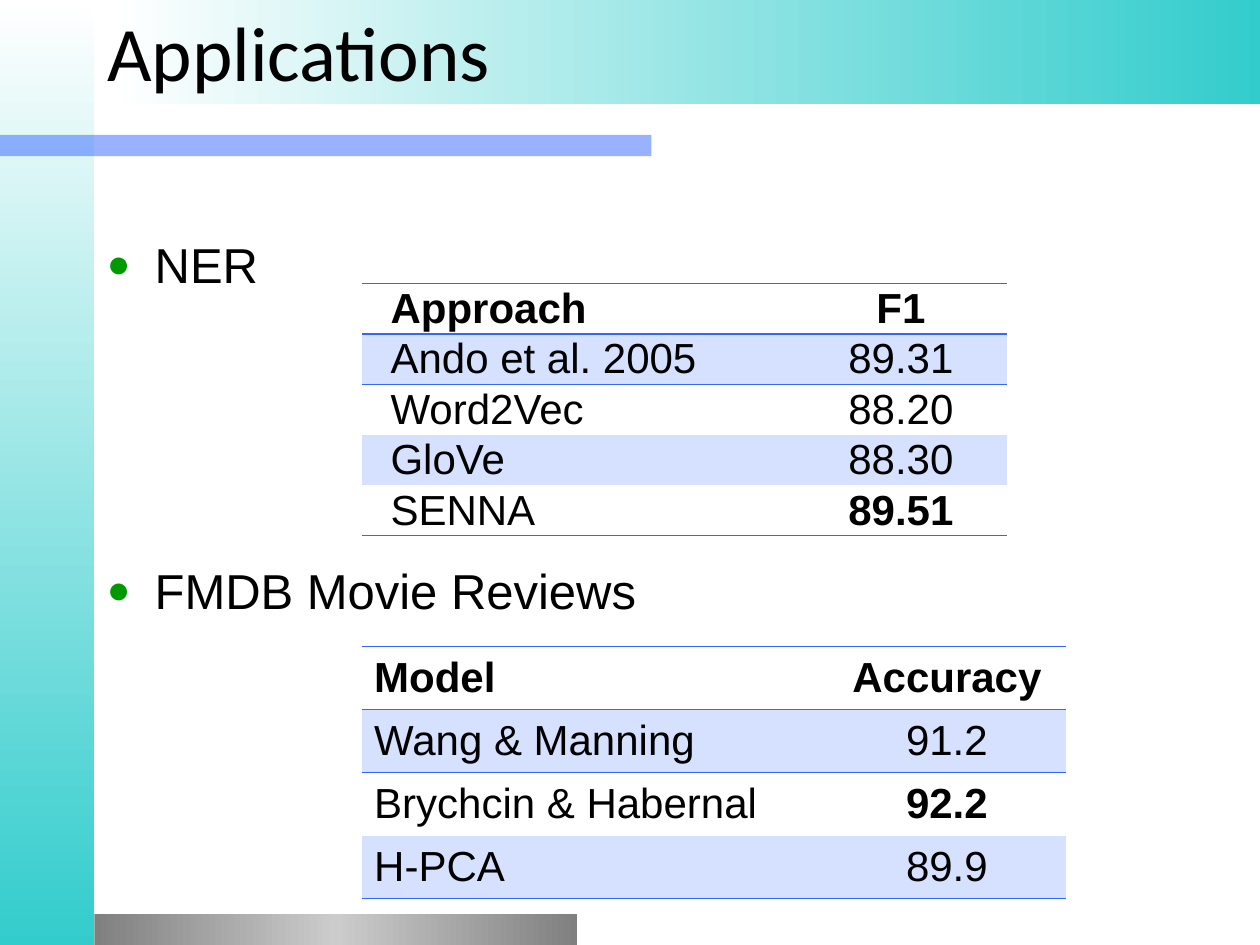
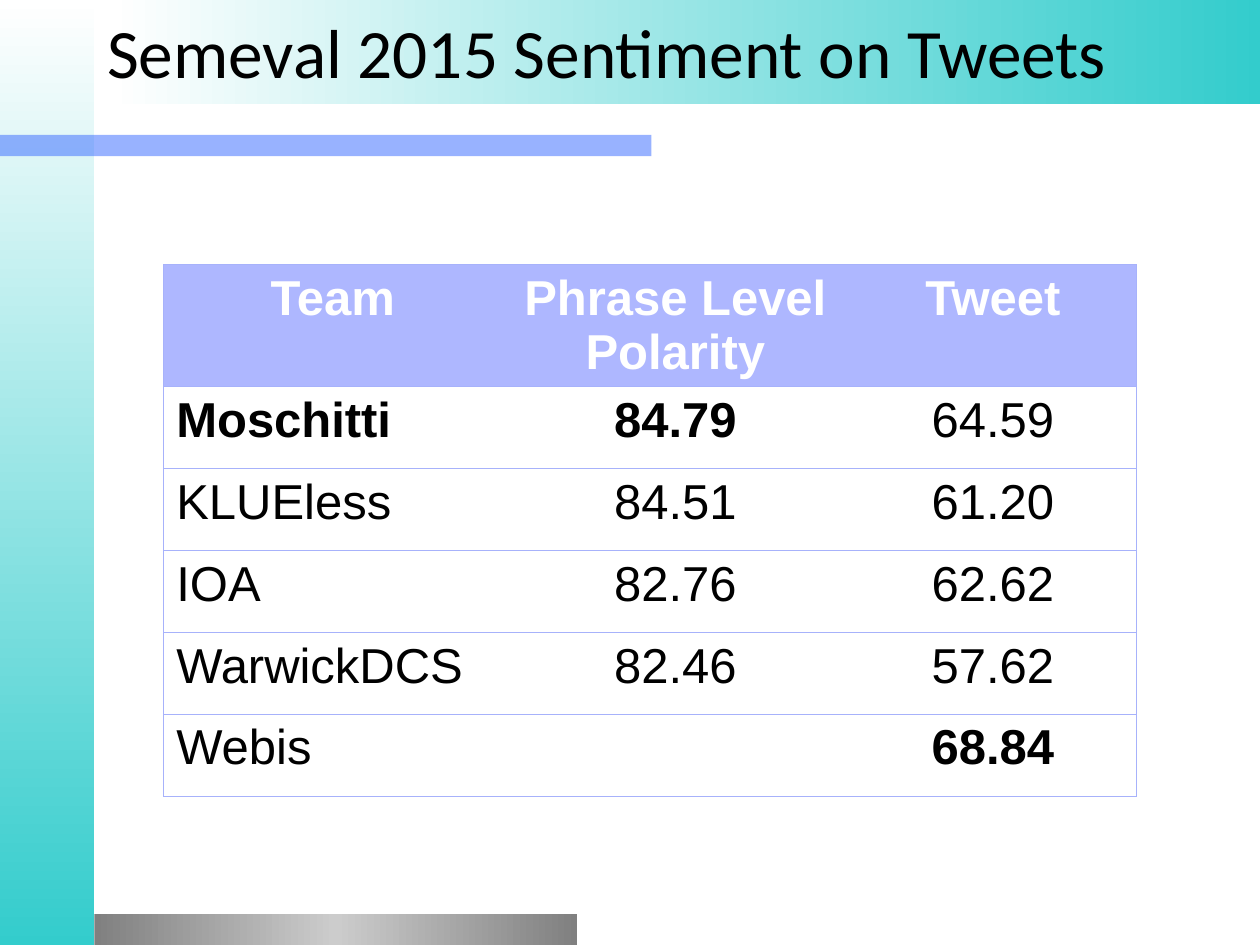
from pptx import Presentation, util as u
from pptx.dml.color import RGBColor
from pptx.enum import shapes, text
from pptx.oxml import parse_xml
from pptx.oxml.ns import nsdecls, qn

# Shared style
BLACK = RGBColor(0x00, 0x00, 0x00)
WHITE = RGBColor(0xFF, 0xFF, 0xFF)
TEAL = RGBColor(0x33, 0xCC, 0xCC)
BLUE = RGBColor(0x33, 0x66, 0xFF)
PALE_BLUE = RGBColor(0xD6, 0xE0, 0xFF)
LAVENDER = RGBColor(0xAE, 0xB7, 0xFF)
LAVENDER_LINE = RGBColor(0xA7, 0xB2, 0xFB)
GREEN = RGBColor(0x00, 0x99, 0x00)
GREY = RGBColor(0x80, 0x80, 0x80)
SILVER = RGBColor(0xCC, 0xCC, 0xCC)
WIDTH, HEIGHT = 10, 7.5
SIDE = 0.75
LEFT, CENTER = text.PP_ALIGN.LEFT, text.PP_ALIGN.CENTER
TOP, MIDDLE = text.MSO_ANCHOR.TOP, text.MSO_ANCHOR.MIDDLE
NO_GRID_STYLE = "{2D5ABB26-0587-4C30-8999-92F81FD0307C}"

# Bands: left, top, width, height, colours, gradient angle, opacity in percent
BANDS = [
    (0, 0, SIDE, HEIGHT, [WHITE, TEAL], 90, 100),
    (0, 1.07, 5.17, 0.17, [BLUE], 0, 50),
    (SIDE, HEIGHT - 0.25, 3.83, 0.25, [GREY, SILVER, GREY], 0, 100),
    (0.88, 0, WIDTH - 0.88, 0.83, [WHITE, TEAL], 0, 100),
]

# Content: "best" holds the (row, column) cells in bold
NER = {
    "at": (2.87, 2.25), "columns": [3.28, 1.84], "heights": [0.37] * 5,
    "rows": [("Approach", "F1"), ("Ando et al. 2005", "89.31"),
             ("Word2Vec", "88.20"), ("GloVe", "88.30"), ("SENNA", "89.51")],
    "best": {(4, 1)}, "margins": (0.23, 0, 0.07, 0),
}
REVIEWS = {
    "at": (2.87, 5.13), "columns": [3.7, 1.89], "heights": [0.47] * 4,
    "rows": [("Model", "Accuracy"), ("Wang & Manning", "91.2"),
             ("Brychcin & Habernal", "92.2"), ("H-PCA", "89.9")],
    "best": {(2, 1)},
}
SENTIMENT = {
    "at": (1.3, 2.1), "columns": [2.68, 2.76, 2.28],
    "heights": [0.97] + [0.65] * 5,
    "rows": [("Team", "Phrase Level Polarity", "Tweet"),
             ("Moschitti", "84.79", "64.59"), ("KLUEless", "84.51", "61.20"),
             ("IOA", "82.76", "62.62"), ("WarwickDCS", "82.46", "57.62"),
             ("Webis", "", "68.84")],
    "best": {(1, 0), (1, 1), (5, 2)}, "boxed": True,
}
SLIDES = [
    {"title": "Applications", "title_size": 44,
     "bullets": ["NER", "FMDB Movie Reviews"], "tables": [NER, REVIEWS]},
    {"title": "Semeval 2015 Sentiment on Tweets", "title_size": 39.6,
     "bullets": [], "tables": [SENTIMENT]},
]


def write(para, words, size=28, font="Arial", color=BLACK, bold=False, align=LEFT):
    para.alignment = align
    if words:
        span = para.add_run()
        span.text = words
        span.font.size, span.font.name, span.font.bold = u.Pt(size), font, bold
        span.font.color.rgb = color


def place(shape, left, top, width, height):
    shape.left, shape.top = u.Inches(left), u.Inches(top)
    shape.width, shape.height = u.Inches(width), u.Inches(height)


def add_bands(page, layout):
    """Build the bands and put them on the layout, behind its title."""
    for number, (*area, colors, angle, opacity) in enumerate(BANDS, 101):
        band = page.shapes.add_shape(shapes.MSO_SHAPE.RECTANGLE, *map(u.Inches, area))
        band.shadow.inherit = False
        band.line.fill.background()
        band.fill.solid()
        band.fill.fore_color.rgb = colors[0]
        solid = band.element.spPr.find(qn("a:solidFill"))
        if len(colors) > 1:
            stops = "".join(
                f'<a:gs pos="{100000 * i // (len(colors) - 1)}"><a:srgbClr val="{c}"/></a:gs>'
                for i, c in enumerate(colors))
            solid.getparent().replace(solid, parse_xml(
                f'<a:gradFill {nsdecls("a")}><a:gsLst>{stops}</a:gsLst>'
                f'<a:lin ang="{angle * 60000}" scaled="0"/></a:gradFill>'))
        elif opacity < 100:
            solid[0].append(parse_xml(
                f'<a:alpha {nsdecls("a")} val="{opacity * 1000}"/>'))
        band.element.nvSpPr.cNvPr.set("id", str(number))
        layout.placeholders[0].element.addprevious(band.element)


def set_title(page, words, size):
    title = page.shapes.title
    place(title, SIDE, 0, WIDTH - SIDE, 0.8)
    frame = title.text_frame
    frame.auto_size = text.MSO_AUTO_SIZE.NONE
    frame.vertical_anchor = MIDDLE
    write(frame.paragraphs[0], words, size=size, font="Calibri")


def add_bullets(page, items):
    box = page.shapes.add_textbox(0, 0, 0, 0)
    place(box, SIDE, 1.81, 8.5, 5.33)
    frame = box.text_frame
    frame.word_wrap = True
    for i, item in enumerate(items):
        para = frame.add_paragraph() if i else frame.paragraphs[0]
        write(para, item)
        para.space_before = u.Pt(153 if i else 0)  # room for the table above
        props = para._p.get_or_add_pPr()
        props.set("marL", str(u.Inches(0.38)))
        props.set("indent", str(-u.Inches(0.38)))
        for xml in (f'<a:buClr {nsdecls("a")}><a:srgbClr val="{GREEN}"/></a:buClr>',
                    f'<a:buSzPct {nsdecls("a")} val="80000"/>',
                    f'<a:buFont {nsdecls("a")} typeface="Arial"/>',
                    f'<a:buChar {nsdecls("a")} char="●"/>'):
            props.append(parse_xml(xml))


def set_borders(cell, sides, color, points):
    props = cell._tc.get_or_add_tcPr()
    for i, side in enumerate(side for side in "LRTB" if side in sides):
        props.insert(i, parse_xml(
            f'<a:ln{side} {nsdecls("a")} w="{u.Pt(points)}"><a:solidFill>'
            f'<a:srgbClr val="{color}"/></a:solidFill></a:ln{side}>'))


def add_table(page, at, columns, heights, rows, best,
              margins=(0.1, 0.05, 0.1, 0.05), boxed=False):
    area = (*at, sum(columns), sum(heights))
    table = page.shapes.add_table(len(rows), len(columns), *map(u.Inches, area)).table
    table.first_row = table.horz_banding = False
    table._tbl.tblPr.find(qn("a:tableStyleId")).text = NO_GRID_STYLE
    for column, width in zip(table.columns, columns):
        column.width = u.Inches(width)
    for row, height in zip(table.rows, heights):
        row.height = u.Inches(height)

    for r, values in enumerate(rows):
        for c, value in enumerate(values):
            cell, head = table.cell(r, c), r == 0
            (cell.margin_left, cell.margin_top,
             cell.margin_right, cell.margin_bottom) = map(u.Inches, margins)
            cell.vertical_anchor = TOP if boxed else MIDDLE
            write(cell.text_frame.paragraphs[0], value,
                  size=28 if boxed else 24,
                  color=WHITE if boxed and head else BLACK,
                  bold=head or (r, c) in best,
                  align=CENTER if c or (boxed and head) else LEFT)
            # Boxed: filled header and row lines; otherwise: banded rows
            fill = (LAVENDER if head else None) if boxed else (PALE_BLUE if r % 2 else None)
            if fill is None:
                cell.fill.background()
            else:
                cell.fill.solid()
                cell.fill.fore_color.rgb = fill
            if boxed:
                sides = "TB" + "L" * (c == 0) + "R" * (c == len(columns) - 1)
                set_borders(cell, sides, LAVENDER_LINE, 0.75)
            else:
                sides = "TB" if head else "T" * (r == 1) + "B" * (r == len(rows) - 1)
                set_borders(cell, sides, BLUE, 1)


def main():
    deck = Presentation()
    deck.slide_width, deck.slide_height = u.Inches(WIDTH), u.Inches(HEIGHT)
    layout = deck.slide_layouts.get_by_name("Title Only")
    for i, content in enumerate(SLIDES):
        page = deck.slides.add_slide(layout)
        if i == 0:
            add_bands(page, layout)
        set_title(page, content["title"], content["title_size"])
        if content["bullets"]:
            add_bullets(page, content["bullets"])
        for table in content["tables"]:
            add_table(page, **table)
    deck.save("out.pptx")


if __name__ == "__main__":
    main()
